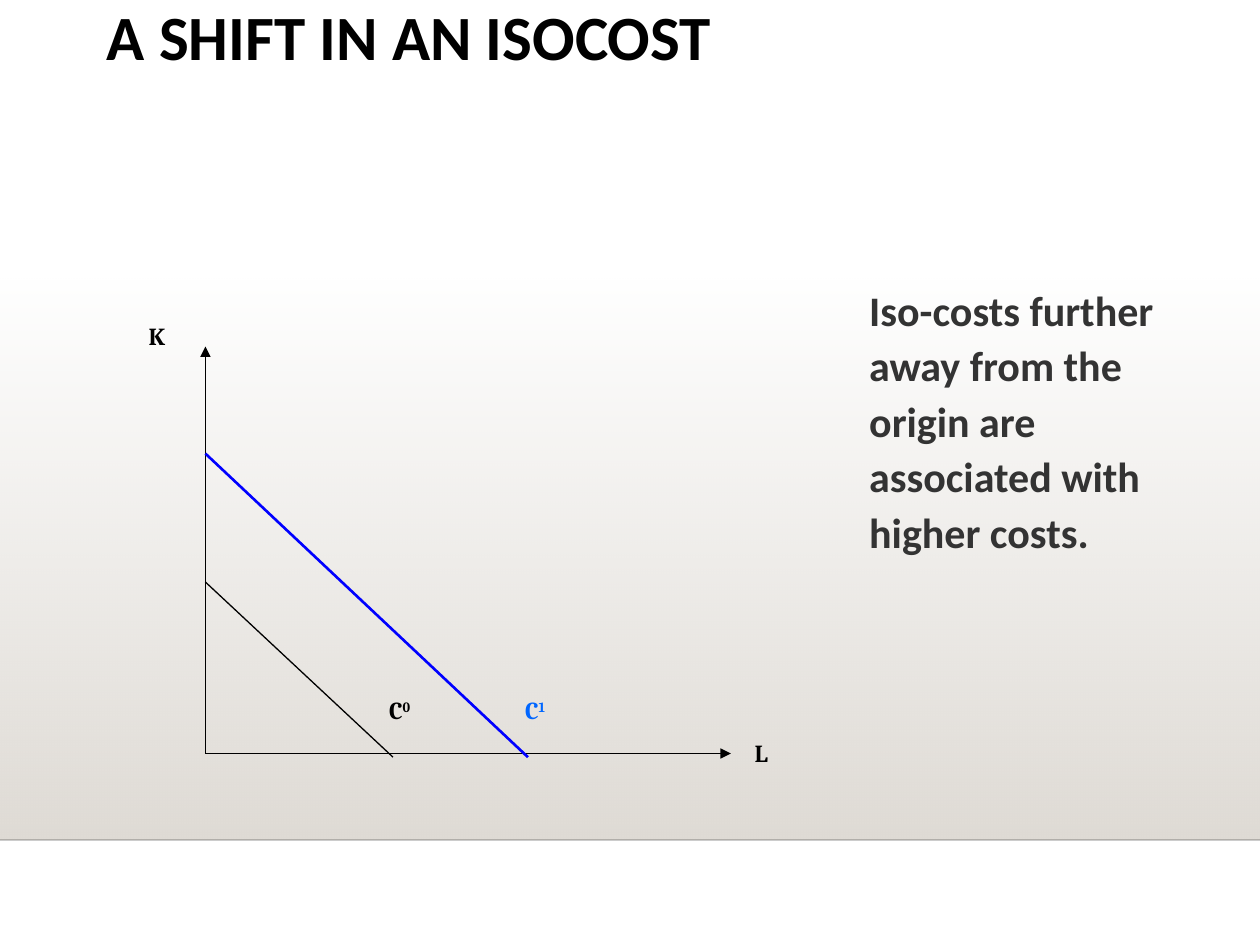
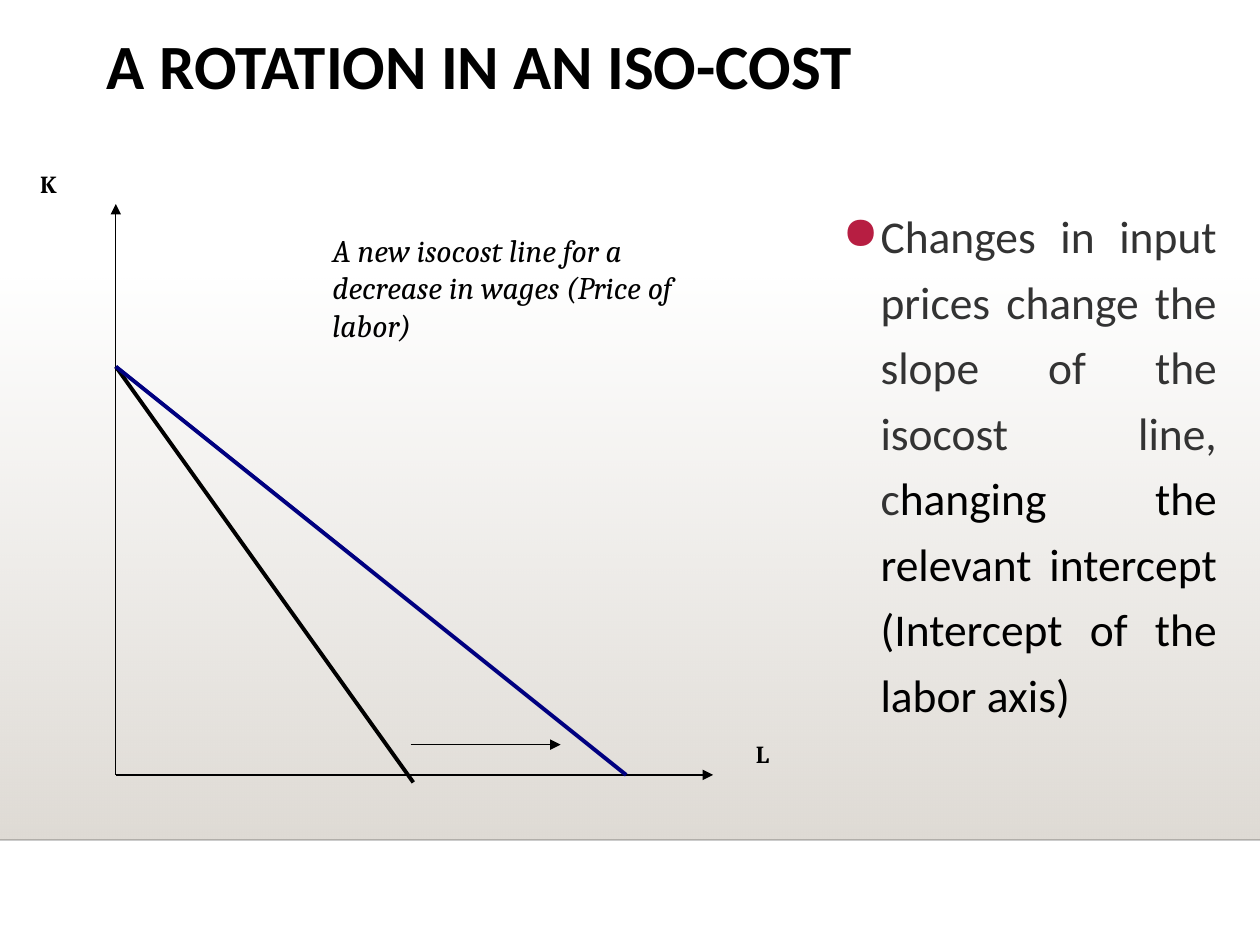
from dataclasses import dataclass
from lxml.etree import SubElement
from pptx import Presentation
from pptx.dml.color import RGBColor
from pptx.enum.shapes import MSO_CONNECTOR, MSO_SHAPE
from pptx.enum.text import MSO_ANCHOR, PP_ALIGN
from pptx.oxml.ns import qn
from pptx.util import Pt


@dataclass(frozen=True)
class Theme:
    head: str = "Calibri"
    serif: str = "Cambria"
    black: str = "000000"
    grey: str = "333333"
    sand: str = "DFDBD5"
    rule: str = "000001"
    red: str = "B71E42"
    blue: str = "0000FF"
    navy: str = "000080"
    sky: str = "0066FF"
    title_size: int = 36
    note_size: int = 18
    mark_size: int = 14
    thin: float = 0.75


THEME = Theme()
WIDTH, HEIGHT = 720, 540
BAND_TOP, BAND_END = 158.4, 480


@dataclass(frozen=True)
class Run:
    text: str
    color: str = THEME.black
    bold: bool = False
    slant: bool = False
    raised: bool = False


@dataclass(frozen=True)
class Box:
    left: float
    top: float
    width: float
    height: float
    runs: tuple[Run, ...]
    size: int = THEME.mark_size
    font: str = THEME.serif
    pitch: float = 1.0
    align: PP_ALIGN = PP_ALIGN.LEFT
    indent: float = 0
    bullet: str = ""


@dataclass(frozen=True)
class Line:
    x1: float
    y1: float
    x2: float
    y2: float
    color: str = THEME.black
    weight: float = THEME.thin
    arrow: bool = False


@dataclass(frozen=True)
class Page:
    boxes: tuple[Box, ...]
    lines: tuple[Line, ...]


# Makers for the parts that recur
def title(text: str, top: float, height: float) -> Box:
    return Box(54, top, 612, height, (Run(text, bold=True),),
               THEME.title_size, THEME.head, 0.9)


def label(left: float, top: float, text: str, power: str = "",
          color: str = THEME.black) -> Box:
    runs = [Run(text, color, bold=True)]
    if power:
        runs.append(Run(power, color, bold=True, raised=True))
    return Box(left, top, 46, 24, tuple(runs))


def axes(x: float, y: float, top: float, right: float) -> tuple[Line, ...]:
    return (Line(x, y, x, top, arrow=True), Line(x, y, right, y, arrow=True))


# Drawing
def set_alpha(color, percent: int) -> None:
    SubElement(color, qn("a:alpha"), val=str(percent * 1000))


def draw_line(slide, line: Line):
    shape = slide.shapes.add_connector(
        MSO_CONNECTOR.STRAIGHT, Pt(line.x1), Pt(line.y1), Pt(line.x2), Pt(line.y2))
    shape.line.color.rgb = RGBColor.from_string(line.color)
    shape.line.width = Pt(line.weight)
    props = shape._element.spPr
    if line.arrow:
        SubElement(props.find(qn("a:ln")), qn("a:tailEnd"), type="triangle")
    SubElement(props, qn("a:effectLst"))
    return shape


def draw_band(slide) -> None:
    band = slide.shapes.add_shape(MSO_SHAPE.RECTANGLE, 0, Pt(BAND_TOP),
                                  Pt(WIDTH), Pt(BAND_END - BAND_TOP))
    band.shadow.inherit = False
    band.line.fill.background()
    band.fill.gradient()
    band.fill.gradient_angle = 270
    for stop in band.fill.gradient_stops:
        stop.color.rgb = RGBColor.from_string(THEME.sand)
    set_alpha(next(band._element.spPr.iter(qn("a:srgbClr"))), 0)
    rule = draw_line(slide, Line(0, BAND_END, WIDTH, BAND_END, THEME.rule, 1))
    set_alpha(next(rule._element.spPr.iter(qn("a:srgbClr"))), 20)


def add_bullet(props, mark: str) -> None:
    color = SubElement(props, qn("a:buClr"))
    SubElement(color, qn("a:srgbClr"), val=THEME.red)
    SubElement(props, qn("a:buChar"), char=mark)


def draw_box(slide, box: Box) -> None:
    shape = slide.shapes.add_textbox(Pt(box.left), Pt(box.top),
                                     Pt(box.width), Pt(box.height))
    frame = shape.text_frame
    frame.word_wrap = True
    frame.vertical_anchor = MSO_ANCHOR.TOP
    para = frame.paragraphs[0]
    para.alignment = box.align
    para.line_spacing = box.pitch
    props = para._p.get_or_add_pPr()
    if box.indent:
        props.set("marL", str(Pt(box.indent)))
    if box.bullet:
        props.set("indent", str(-Pt(box.indent)))
        add_bullet(props, box.bullet)
    for part in box.runs:
        run = para.add_run()
        run.text = part.text
        font = run.font
        font.name, font.size = box.font, Pt(box.size)
        font.bold, font.italic = part.bold, part.slant
        font.color.rgb = RGBColor.from_string(part.color)
        if part.raised:
            run._r.get_or_add_rPr().set("baseline", "30000")


def draw_page(deck, page: Page) -> None:
    slide = deck.slides.add_slide(deck.slide_layouts[6])
    draw_band(slide)
    for line in page.lines:
        draw_line(slide, line)
    for box in page.boxes:
        draw_box(slide, box)


# Shift: two parallel cost lines
SHIFT = Page(
    boxes=(
        title("A SHIFT IN AN ISOCOST", 0, 84),
        Box(468, 156.2, 234, 180,
            (Run("Iso-costs further away from the origin are associated "
                 "with higher costs.", THEME.grey, bold=True),),
            24, THEME.head, 1.1, indent=21.6),
        label(77.8, 180, "K"),
        label(424.1, 418.3, "L"),
        label(293, 393.8, "C", "1", THEME.sky),
        label(215.3, 393.8, "C", "0"),
    ),
    lines=axes(117.4, 430.6, 198, 417.6) + (
        Line(117.4, 332.6, 224.6, 432.7),
        Line(117.4, 259.2, 301.7, 432.7, THEME.blue, 1.5),
    ),
)

# Turn: two cost lines from one intercept
TURN = Page(
    boxes=(
        title("A ROTATION IN AN ISO-COST", 16.6, 61.2),
        Box(474.5, 109.4, 228.2, 324,
            (Run("Changes in input prices change the slope of the isocost "
                 "line, c", THEME.grey),
             Run("hanging the relevant intercept (Intercept of the labor axis)")),
            26, THEME.head, 1.2, PP_ALIGN.JUSTIFY, 21.6, "●"),
        label(424.8, 419, "L"),
        label(15.8, 92.9, "K"),
        Box(182.9, 128.2, 233.3, 93.6,
            (Run("A new isocost line for a decrease in wages (Price of labor)",
                 slant=True),), THEME.note_size),
    ),
    lines=axes(66.2, 442.8, 116.6, 407.5) + (
        Line(66.2, 209.5, 236.2, 447.1, weight=2.25),
        Line(66.2, 209.5, 357.8, 442.8, THEME.navy, 2.25),
        Line(234.7, 425.5, 320.4, 425.5, arrow=True),
    ),
)


def main() -> None:
    deck = Presentation()
    deck.slide_width, deck.slide_height = Pt(WIDTH), Pt(HEIGHT)
    for page in (SHIFT, TURN):
        draw_page(deck, page)
    deck.save("out.pptx")


if __name__ == "__main__":
    main()
